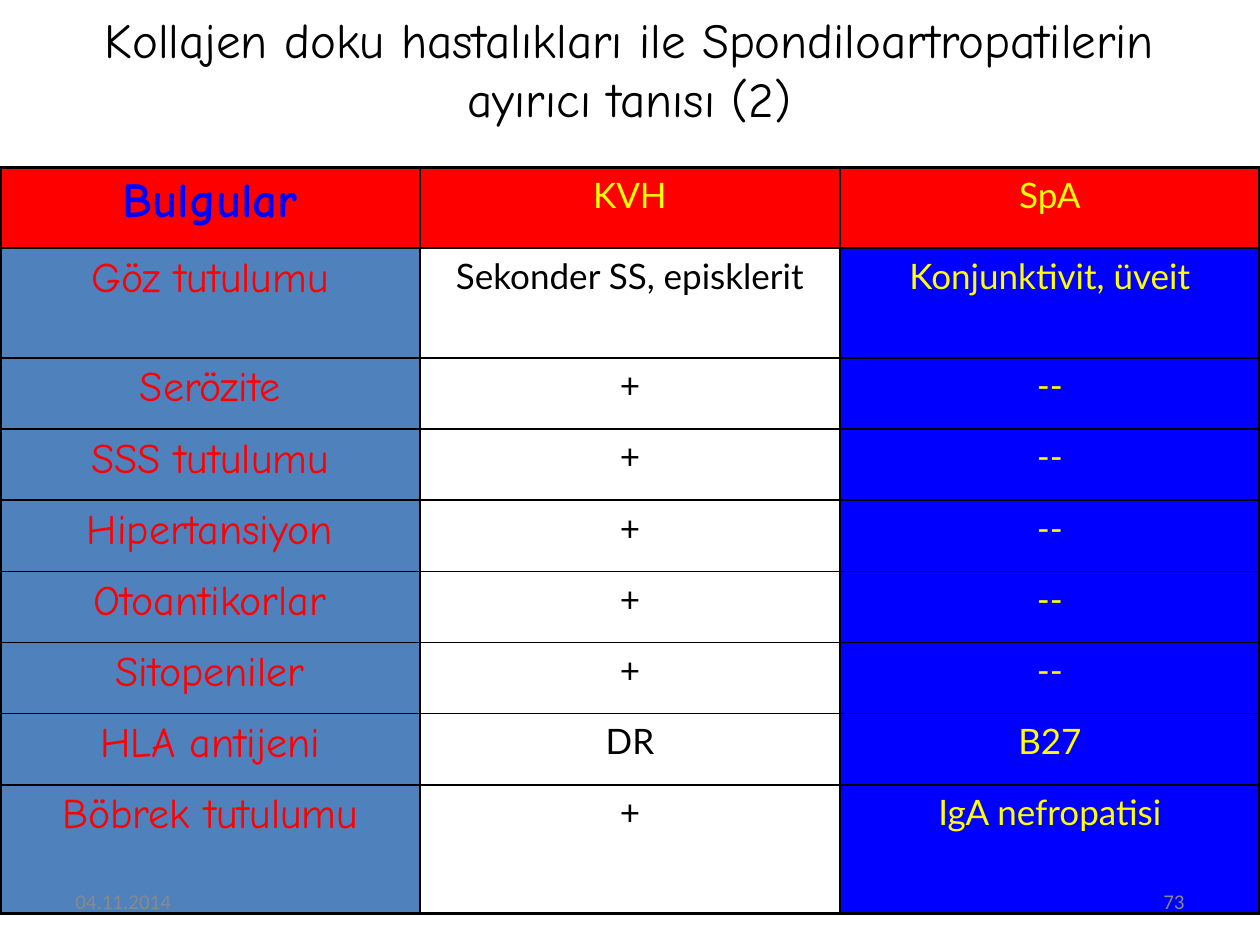
from lxml.etree import SubElement
from pptx import Presentation
from pptx.dml.color import RGBColor
from pptx.enum.text import MSO_ANCHOR, PP_ALIGN
from pptx.oxml.ns import qn
from pptx.util import Inches, Pt

COLORS = {"black": "000000", "white": "FFFFFF", "red": "FF0000", "blue": "0000FF",
          "steel": "4F81BD", "yellow": "FFFF00", "gray": "898989"}
TITLE = "Kollajen doku hastalıkları ile Spondiloartropatilerin ayırıcı tanısı (2)"
ROWS = [
    ("Bulgular", "KVH", "SpA"),
    ("Göz tutulumu", "Sekonder SS, episklerit", "Konjunktivit, üveit"),
    ("Serözite", "+", "--"),
    ("SSS tutulumu", "+", "--"),
    ("Hipertansiyon", "+", "--"),
    ("Otoantikorlar", "+", "--"),
    ("Sitopeniler", "+", "--"),
    ("HLA antijeni", "DR", "B27"),
    ("Böbrek tutulumu", "+", "IgA nefropatisi"),
]
HEIGHTS = [0.64, 0.87] + [0.565] * 6 + [1.02]
HEADER_STYLES = [
    ("red", "blue", {"size": Pt(28), "name": "Comic Neue", "bold": True}),
    ("red", "yellow", {"size": Pt(20), "name": "Lato", "bold": False}),
    ("red", "yellow", {"size": Pt(20), "name": "Lato", "bold": False}),
]
BODY_STYLES = [
    ("steel", "red", {"size": Pt(24), "name": "Comic Neue", "bold": False}),
    ("white", "black", {"size": Pt(20), "name": "Lato", "bold": False}),
    ("blue", "yellow", {"size": Pt(20), "name": "Lato", "bold": False}),
]
FOOTERS = [("04.11.2014", 0.5, PP_ALIGN.LEFT), ("73", 7.17, PP_ALIGN.RIGHT)]


def rgb(name):
    return RGBColor.from_string(COLORS[name])


def write(tf, text, color, font, align):
    p = tf.paragraphs[0]
    p.alignment = align
    r = p.add_run()
    r.text = text
    r.font.color.rgb = rgb(color)
    for key, value in font.items():
        setattr(r.font, key, value)


def add_borders(cell, widths):
    tcPr = cell._tc.get_or_add_tcPr()
    for side, width in widths.items():
        ln = SubElement(tcPr, qn(f"a:ln{side}"), w=str(Pt(width)))
        fill = SubElement(ln, qn("a:solidFill"))
        SubElement(fill, qn("a:srgbClr"), val=COLORS["black"])


def add_title(s):
    sp = s.shapes.title
    box = {"left": 0.33, "top": 0, "width": 9.33, "height": 1.08}
    for key, value in box.items():
        setattr(sp, key, Inches(value))
    sp.fill.solid()
    sp.fill.fore_color.rgb = rgb("white")
    sp.line.color.rgb = rgb("white")
    sp.line.width = Pt(0.75)
    sp.text_frame.vertical_anchor = MSO_ANCHOR.MIDDLE
    write(sp.text_frame, TITLE, "black", {"size": Pt(28), "name": "Comic Neue"},
          PP_ALIGN.CENTER)


def add_findings(s):
    last_row, last_col = len(ROWS) - 1, len(ROWS[0]) - 1
    table = s.shapes.add_table(len(ROWS), len(ROWS[0]), 0, Inches(1.33),
                               Inches(10), Inches(sum(HEIGHTS))).table
    table.horz_banding = False
    for i, (texts, height) in enumerate(zip(ROWS, HEIGHTS)):
        table.rows[i].height = Inches(height)
        styles = BODY_STYLES if i else HEADER_STYLES
        for j, (text, (fill, color, font)) in enumerate(zip(texts, styles)):
            cell = table.cell(i, j)
            edges = {"L": j == 0, "R": j == last_col, "T": i == 0, "B": i == last_row}
            add_borders(cell, {side: 2.25 if outer else 1 for side, outer in edges.items()})
            cell.fill.solid()
            cell.fill.fore_color.rgb = rgb(fill)
            write(cell.text_frame, text, color, font, PP_ALIGN.CENTER)


def add_footers(s):
    for text, left, align in FOOTERS:
        tf = s.shapes.add_textbox(Inches(left), Inches(6.95), Inches(2.33),
                                  Inches(0.4)).text_frame
        tf.word_wrap = True
        tf.vertical_anchor = MSO_ANCHOR.MIDDLE
        write(tf, text, "gray", {"size": Pt(12), "name": "Calibri"}, align)


def main():
    """Build the differential diagnosis slide."""
    prs = Presentation()
    prs.slide_width, prs.slide_height = Inches(10), Inches(7.5)
    s = prs.slides.add_slide(prs.slide_layouts[5])
    add_title(s)
    add_findings(s)
    add_footers(s)
    prs.save("out.pptx")


if __name__ == "__main__":
    main()
